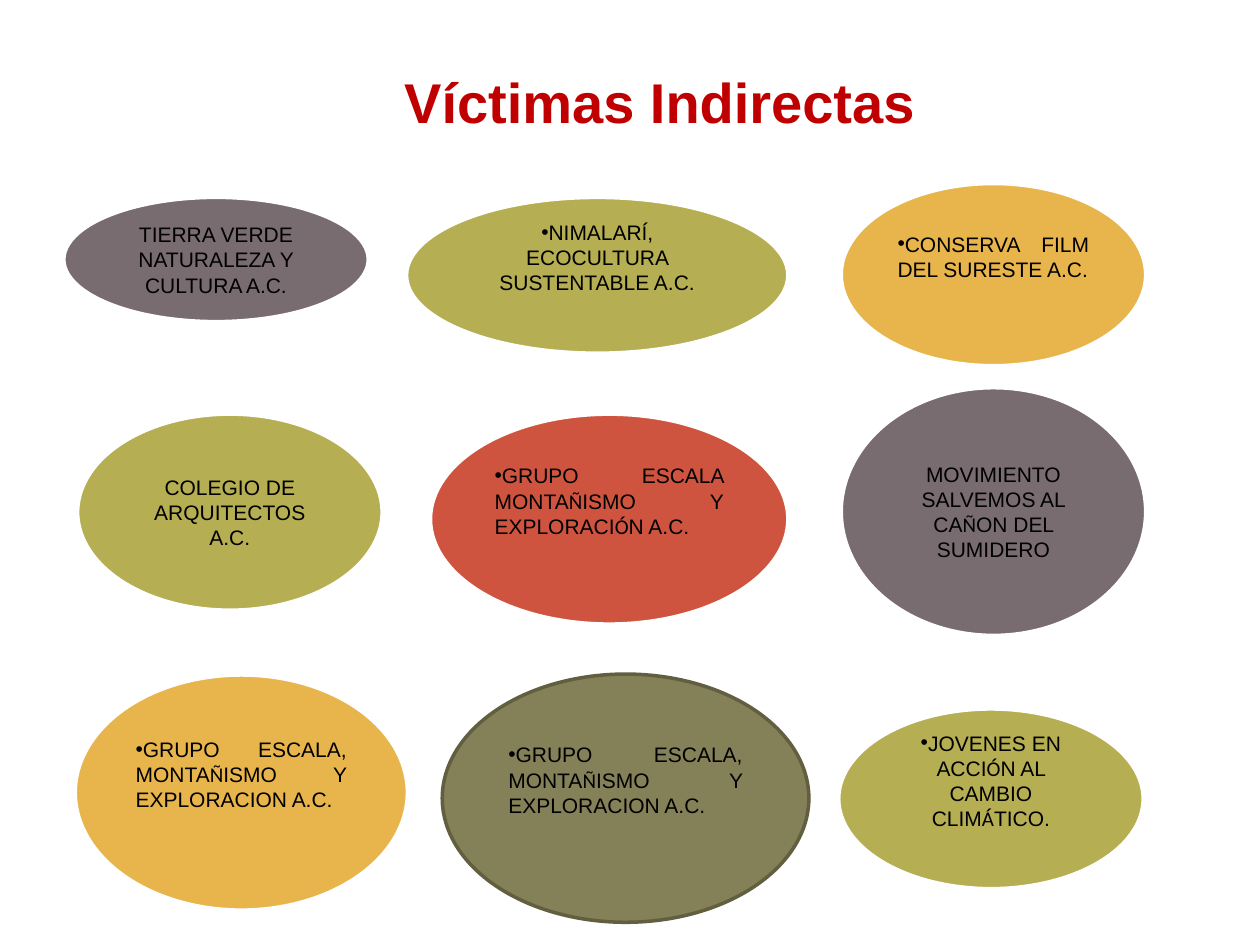
from itertools import groupby

from lxml import etree
from pptx import Presentation
from pptx.dml.color import RGBColor
from pptx.enum.shapes import MSO_SHAPE
from pptx.enum.text import MSO_ANCHOR, MSO_AUTO_SIZE, PP_ALIGN
from pptx.oxml.ns import qn
from pptx.util import Inches, Pt

CONNECTOR = MSO_SHAPE.FLOWCHART_CONNECTOR
MIDDLE = MSO_ANCHOR.MIDDLE
FIT_SHAPE = MSO_AUTO_SIZE.SHAPE_TO_FIT_TEXT
CENTER, JUSTIFY = PP_ALIGN.CENTER, PP_ALIGN.JUSTIFY

WHITE, BLACK, RED = "FFFFFF", "000000", "C00000"
MAUVE, GREEN, AMBER = "786C71", "B5AE53", "E8B54D"
BRICK, OLIVE, DARK_OLIVE = "CF543F", "848058", "625F41"
ACCENTED = "ÁÍÑÓ"

# box, fill, alignment, bulleted, name
GROUPS = [
    ((0.5, 1.56, 2.43, 1), MAUVE, CENTER, False,
     "TIERRA VERDE NATURALEZA Y CULTURA A.C."),
    ((3.22, 1.56, 3.04, 1.25), GREEN, CENTER, True,
     "NIMALARÍ, ECOCULTURA SUSTENTABLE A.C."),
    ((6.67, 1.45, 2.43, 1.46), AMBER, JUSTIFY, True,
     "CONSERVA FILM DEL SURESTE A.C."),
    ((0.61, 3.28, 2.43, 1.57), GREEN, CENTER, False,
     "COLEGIO DE ARQUITECTOS A.C."),
    ((3.41, 3.28, 2.85, 1.68), BRICK, JUSTIFY, True,
     "GRUPO ESCALA MONTAÑISMO Y EXPLORACIÓN A.C."),
    ((6.67, 3.07, 2.43, 1.98), MAUVE, CENTER, False,
     "MOVIMIENTO SALVEMOS AL CAÑON DEL SUMIDERO"),
    ((0.59, 5.35, 2.65, 1.88), AMBER, JUSTIFY, True,
     "GRUPO ESCALA, MONTAÑISMO Y EXPLORACION A.C."),
    ((3.51, 5.35, 2.91, 1.97), OLIVE, JUSTIFY, True,
     "GRUPO ESCALA, MONTAÑISMO Y EXPLORACION A.C."),
    ((6.65, 5.62, 2.43, 1.44), GREEN, CENTER, True,
     "JOVENES EN ACCIÓN AL CAMBIO CLIMÁTICO."),
]


def color(value):
    return RGBColor.from_string(value)


def style(font, name, size, fill, bold=False):
    font.name, font.size, font.bold = name, Pt(size), bold
    font.color.rgb = color(fill)


def add_bullet(para):
    props = para._p.get_or_add_pPr()
    props.set("marL", "0")
    props.set("indent", "0")
    etree.SubElement(props, qn("a:buFont")).set("typeface", "Arial")
    etree.SubElement(props, qn("a:buChar")).set("char", "•")


def add_title(page, box, text):
    title = page.shapes.add_textbox(*map(Inches, box))
    frame = title.text_frame
    frame.text = text
    frame.word_wrap = False
    frame.auto_size = FIT_SHAPE
    style(frame.paragraphs[0].runs[0].font, "Arial", 32, RED, bold=True)


def add_group(page, box, fill, align, bulleted, name):
    """Draw one oval; bulleted names sit a little above its middle."""
    oval = page.shapes.add_shape(CONNECTOR, *map(Inches, box))
    oval.shadow.inherit = False
    oval.fill.solid()
    oval.fill.fore_color.rgb = color(fill)
    outlined = fill == OLIVE
    oval.line.color.rgb = color(DARK_OLIVE if outlined else WHITE)
    oval.line.width = Pt(2 if outlined else 3)

    frame = oval.text_frame
    frame.word_wrap = True
    frame.vertical_anchor = MIDDLE
    para = frame.paragraphs[0]
    para.alignment = align
    if bulleted:
        frame.margin_bottom = Inches(0.34)
        add_bullet(para)
    for accented, letters in groupby(name, key=lambda letter: letter in ACCENTED):
        span = para.add_run()
        span.text = "".join(letters)
        style(span.font, "Calibri" if accented else "Arial", 12, BLACK)


def main():
    deck = Presentation()
    deck.slide_width, deck.slide_height = Inches(10), Inches(7.5)
    page = deck.slides.add_slide(deck.slide_layouts[6])
    add_title(page, (3.11, 0.49, 4.29, 0.64), "Víctimas Indirectas")
    for group in GROUPS:
        add_group(page, *group)
    deck.save("out.pptx")


if __name__ == "__main__":
    main()
